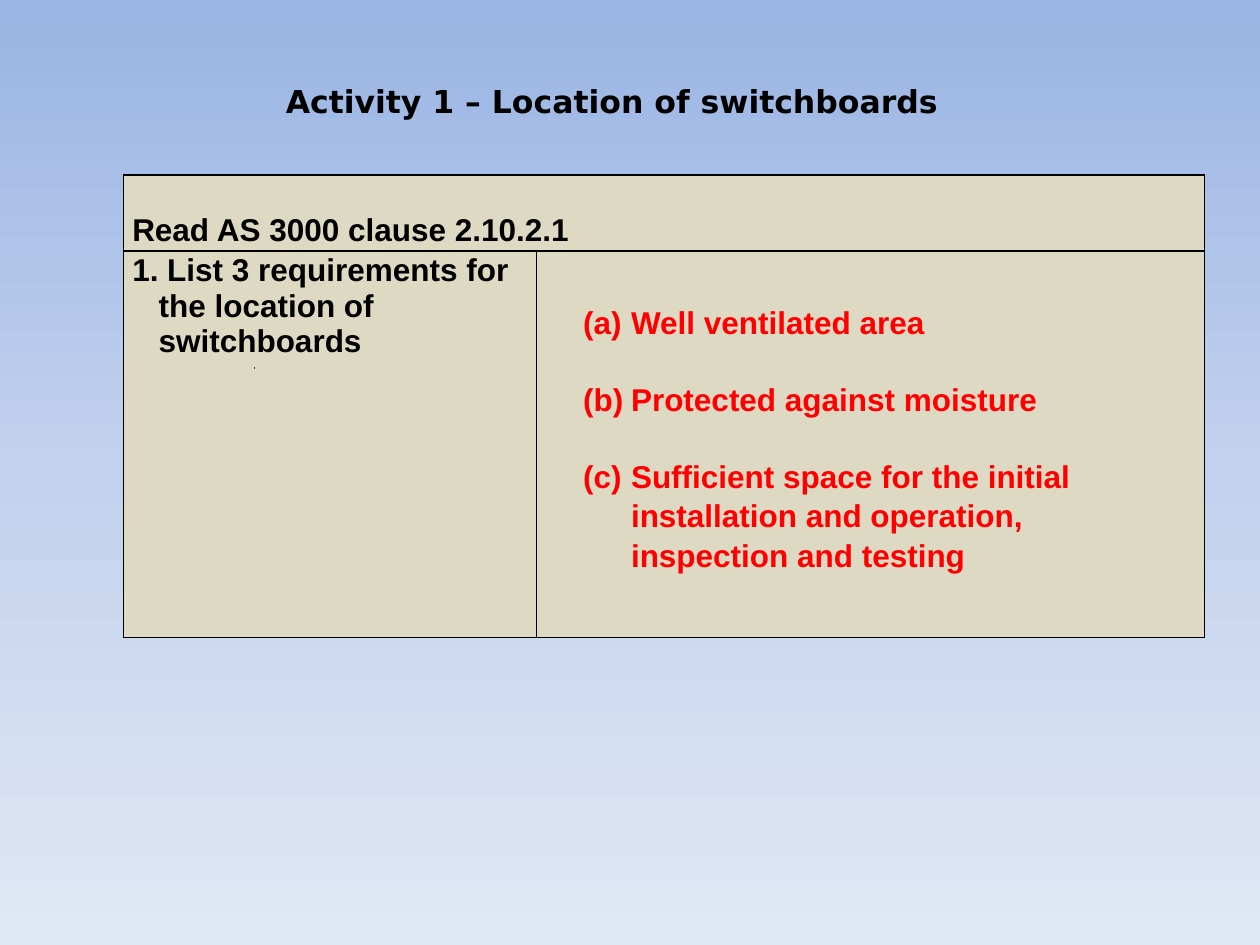
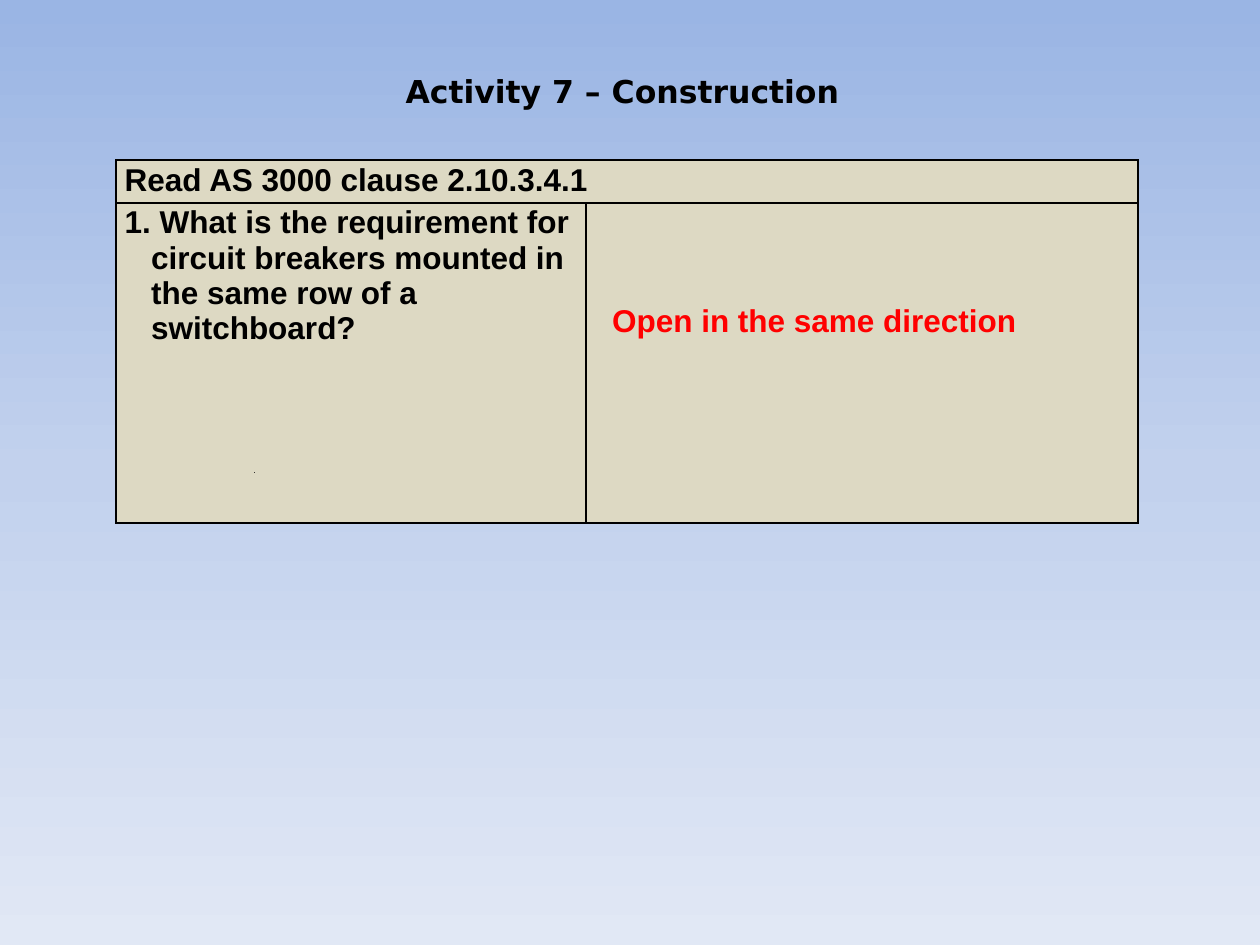
from copy import deepcopy
from dataclasses import dataclass

from lxml.etree import SubElement
from pptx import Presentation
from pptx.dml.color import RGBColor
from pptx.enum.shapes import MSO_SHAPE
from pptx.enum.text import MSO_AUTO_SIZE
from pptx.oxml.ns import qn
from pptx.util import Inches, Pt


@dataclass(frozen=True)
class Theme:
    """Colours, fonts and sizes shared by the activity slides."""

    background: tuple = ((0, "9AB5E4"), (0.5, "C2D1ED"), (1, "E1E8F5"))
    ink: str = "000000"
    answer: str = "FF0000"
    cell: str = "DDD9C3"
    marker: str = "4F81BD"
    title_font: str = "DejaVu Sans"
    body_font: str = "Arial"
    size: float = 18
    answer_gap: float = 21.7
    answer_leading: float = 1.04
    border: float = 1
    marker_line: float = 0.75


def write(paragraph, text, font, color, size, indent=0, numbering=None,
          line_spacing=None, space_before=0):
    """Put bold text into a paragraph with the given format."""
    properties = paragraph._p.get_or_add_pPr()
    if indent:
        properties.set("marL", str(Inches(indent)))
        properties.set("indent", str(-Inches(indent)))
    if numbering:
        SubElement(properties, qn("a:buFont"), typeface="+mj-lt")
        SubElement(properties, qn("a:buAutoNum"), type=numbering)
    if line_spacing:
        paragraph.line_spacing = line_spacing
    paragraph.space_before = Pt(space_before)
    run = paragraph.add_run()
    run.text = text
    run.font.name = font
    run.font.size = Pt(size)
    run.font.bold = True
    run.font.color.rgb = RGBColor.from_string(color)


class ActivityDeck:
    """Holds the theme and the current slide, and draws on it."""

    def __init__(self, presentation, theme):
        """Set the slide size and the shared background."""
        self.presentation = presentation
        self.theme = theme
        self.slide = None
        presentation.slide_width = Inches(10)
        presentation.slide_height = Inches(7.5)
        self.paint_background()

    def paint_background(self):
        """Give the slide master a vertical gradient."""
        master = self.presentation.slide_master
        fill = master.background.fill
        fill.gradient()
        fill.gradient_angle = 270
        first_stop = master.element.find(".//" + qn("p:bg")).find(".//" + qn("a:gs"))
        first_stop.addnext(deepcopy(first_stop))
        for stop, (position, color) in zip(fill.gradient_stops, self.theme.background):
            stop.position = position
            stop.color.rgb = RGBColor.from_string(color)

    def add_slide(self):
        """Start a new blank slide."""
        self.slide = self.presentation.slides.add_slide(self.presentation.slide_layouts[6])

    def text_box(self, left, top, width, height, wrap=True):
        """Add a text box that grows with its text and return its frame."""
        shape = self.slide.shapes.add_textbox(
            Inches(left), Inches(top), Inches(width), Inches(height))
        frame = shape.text_frame
        frame.word_wrap = wrap
        frame.auto_size = MSO_AUTO_SIZE.SHAPE_TO_FIT_TEXT
        return frame

    def title(self, text, left, top, width, wrap=True):
        """Add the activity title."""
        frame = self.text_box(left, top, width, 0.4, wrap)
        write(frame.paragraphs[0], text, self.theme.title_font, self.theme.ink,
              self.theme.size)

    def answers(self, texts, left, top, width, height):
        """Add the answers, lettered when there are several."""
        frame = self.text_box(left, top, width, height)
        listed = len(texts) > 1
        for index, text in enumerate(texts):
            paragraph = frame.add_paragraph() if index else frame.paragraphs[0]
            write(paragraph, text, self.theme.body_font, self.theme.answer,
                  self.theme.size, indent=0.38 if listed else 0,
                  numbering="alphaLcParenBoth" if listed else None,
                  line_spacing=self.theme.answer_leading,
                  space_before=self.theme.answer_gap if index else 0)

    def style_cell(self, cell):
        """Set the margins, borders and fill of a table cell."""
        cell.margin_left = cell.margin_right = Inches(0.07)
        cell.margin_top = cell.margin_bottom = Inches(0.02)
        properties = cell._tc.get_or_add_tcPr()
        for side in ("lnL", "lnR", "lnT", "lnB"):
            line = SubElement(properties, qn(f"a:{side}"), w=str(Pt(self.theme.border)))
            fill = SubElement(line, qn("a:solidFill"))
            SubElement(fill, qn("a:srgbClr"), val=self.theme.ink)
        cell.fill.solid()
        cell.fill.fore_color.rgb = RGBColor.from_string(self.theme.cell)

    def question_table(self, heading, question, left, top, columns, rows,
                       heading_spacing=None):
        """Add a heading row above a question cell and an empty answer cell."""
        table = self.slide.shapes.add_table(
            2, 2, Inches(left), Inches(top),
            Inches(sum(columns)), Inches(sum(rows))).table
        table.first_row = table.horz_banding = False
        for column, width in zip(table.columns, columns):
            column.width = Inches(width)
        for row, height in zip(table.rows, rows):
            row.height = Inches(height)
        for cell in table.iter_cells():
            self.style_cell(cell)
        table.cell(0, 0).merge(table.cell(0, 1))
        write(table.cell(0, 0).text_frame.paragraphs[0], heading,
              self.theme.body_font, self.theme.ink, self.theme.size,
              line_spacing=heading_spacing)
        write(table.cell(1, 0).text_frame.paragraphs[0], question,
              self.theme.body_font, self.theme.ink, self.theme.size, indent=0.21)

    def marker(self, left, top):
        """Add the speck below the question."""
        shape = self.slide.shapes.add_shape(
            MSO_SHAPE.RECTANGLE, Inches(left), Inches(top), 0, 0)
        shape.shadow.inherit = False
        shape.fill.solid()
        shape.fill.fore_color.rgb = RGBColor.from_string(self.theme.marker)
        shape.line.color.rgb = RGBColor.from_string(self.theme.ink)
        shape.line.width = Pt(self.theme.marker_line)


def add_location_slide(deck):
    """Build the activity on the location of switchboards."""
    deck.add_slide()
    deck.question_table(
        "Read AS 3000 clause 2.10.2.1",
        "1. List 3 requirements for the location of switchboards",
        0.98, 1.39, columns=(3.28, 5.3), rows=(0.6, 3.07), heading_spacing=2.0)
    deck.marker(2.02, 2.92)
    deck.title("Activity 1 – Location of switchboards", 2.17, 0.6, 6.77)
    deck.answers(
        ["Well ventilated area",
         "Protected against moisture",
         "Sufficient space for the initial installation and operation, "
         "inspection and testing"],
        4.53, 2.34, 4.72, 2.22)


def add_construction_slide(deck):
    """Build the activity on construction."""
    deck.add_slide()
    deck.question_table(
        "Read AS 3000 clause 2.10.3.4.1",
        "1. What is the requirement for circuit breakers mounted "
        "in the same row of a switchboard?",
        0.92, 1.27, columns=(3.73, 4.38), rows=(0.34, 2.54))
    deck.marker(2.02, 3.75)
    deck.title("Activity 7 – Construction", 3.12, 0.52, 3.71, wrap=False)
    deck.answers(["Open in the same direction"], 4.76, 2.33, 4.09, 0.4)


def main():
    """Build and save the presentation."""
    presentation = Presentation()
    deck = ActivityDeck(presentation, Theme())
    add_location_slide(deck)
    add_construction_slide(deck)
    presentation.save("out.pptx")


if __name__ == "__main__":
    main()
